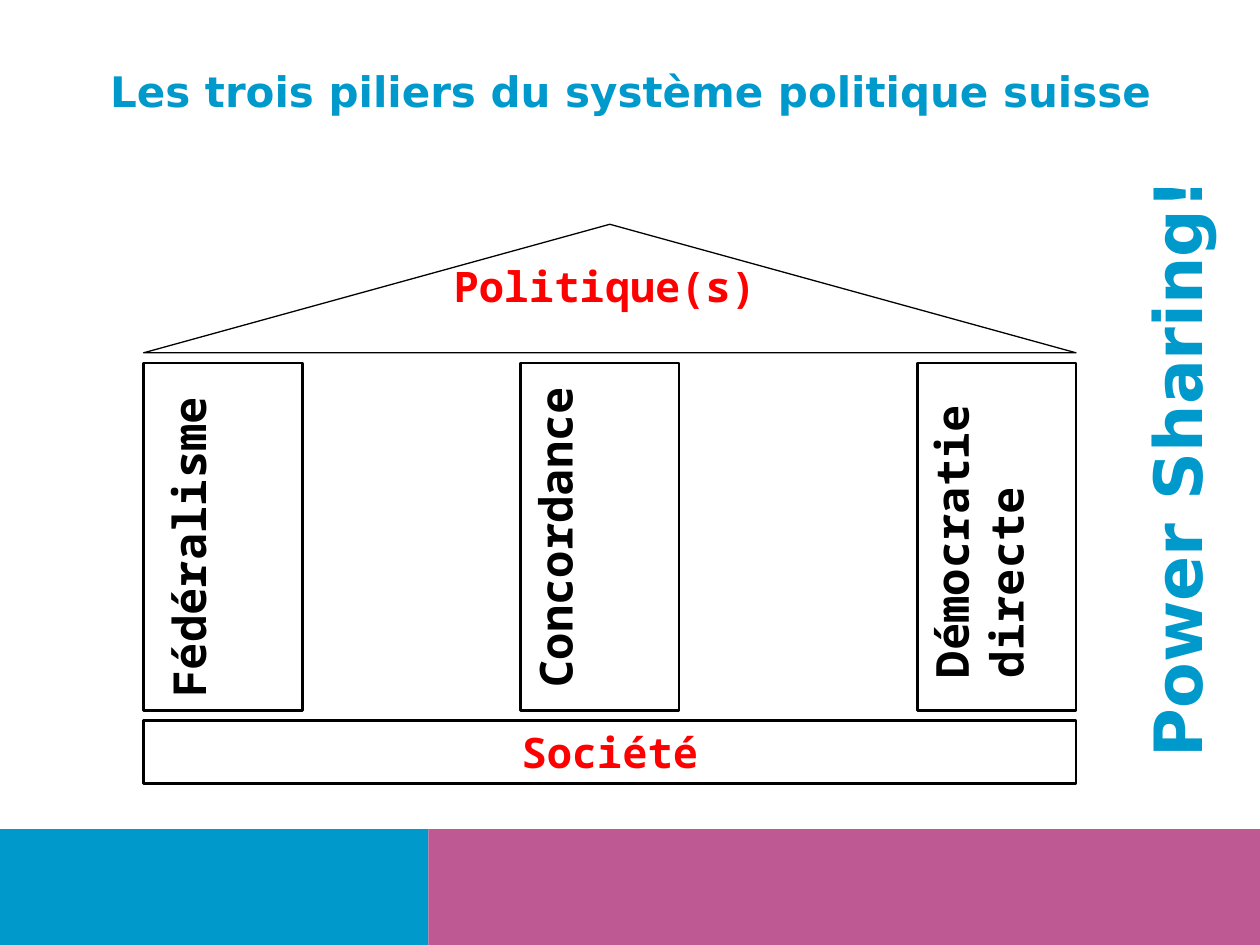
from pptx import Presentation
from pptx.dml.color import RGBColor
from pptx.enum.shapes import MSO_SHAPE as Kind
from pptx.enum.text import MSO_ANCHOR as Anchor, PP_ALIGN as Align
from pptx.util import Inches, Pt

BLUE, PINK, RED, BLACK, WHITE = "0099CC", "BE5993", "FF0000", "000000", "FFFFFF"
SANS, MONO = "DejaVu Sans", "Noto Sans Mono"

TITLE = "Les trois piliers du système politique suisse"
SIDE = "Power Sharing!"
ROOF, BASE = "Politique(s)", "Société"
# pillar left, label, label box
PILLARS = [
    (1.14, "Fédéralisme", (0.11, 3.99, 2.76, 0.53)),
    (4.13, "Concordance", (3.1, 3.99, 2.6, 0.53)),
    (7.28, "Démocratie directe", (6.47, 3.69, 2.6, 0.98)),
]
BANDS = [(0, 3.4, BLUE), (3.4, 6.6, PINK)]

LEFT, WIDTH = 1.14, 7.4
ROOF_TOP, ROOF_H = 1.78, 1.02
PILLAR_TOP, PILLAR_W, PILLAR_H = 2.88, 1.26, 2.76
BASE_TOP, BASE_H = 5.72, 0.5
BAND_TOP, BAND_H = 6.58, 0.92

deck = Presentation()
deck.slide_width, deck.slide_height = Inches(10), Inches(7.5)
slide = deck.slides.add_slide(deck.slide_layouts[6])


def color(code):
    return RGBColor.from_string(code)


def shape(box, kind=Kind.RECTANGLE, fill=None, line=None, width=1.5):
    item = slide.shapes.add_shape(kind, *map(Inches, box))
    item.shadow.inherit = False
    if fill:
        item.fill.solid()
        item.fill.fore_color.rgb = color(fill)
    else:
        item.fill.background()
    if line:
        item.line.color.rgb = color(line)
        item.line.width = Pt(width)
    else:
        item.line.fill.background()
    return item


def write(text, box=None, item=None, size=24, font=MONO, ink=BLACK,
          align=Align.LEFT, turn=0):
    """Put bold text in the given shape, or in a new text box."""
    item = item or slide.shapes.add_textbox(*map(Inches, box))
    item.rotation = turn
    frame = item.text_frame
    frame.word_wrap = True
    frame.vertical_anchor = Anchor.TOP
    para = frame.paragraphs[0]
    para.alignment = align
    run = para.add_run()
    run.text = text
    run.font.size, run.font.name, run.font.bold = Pt(size), font, True
    run.font.color.rgb = color(ink)


for left, width, fill in BANDS:
    shape((left, BAND_TOP, width, BAND_H), fill=fill)

write(TITLE, item=shape((0.29, 0.47, 9.43, 0.84), fill=WHITE),
      font=SANS, ink=BLUE, align=Align.CENTER)

base = shape((LEFT, BASE_TOP, WIDTH, BASE_H), line=BLACK)
write(BASE, item=base, ink=RED, align=Align.CENTER)

for left, label, box in PILLARS:
    shape((left, PILLAR_TOP, PILLAR_W, PILLAR_H), line=BLACK)
    write(label, box, size=26, turn=270)

shape((LEFT, ROOF_TOP, WIDTH, ROOF_H), Kind.ISOSCELES_TRIANGLE,
      line=BLACK, width=0.75)
write(ROOF, (3.5, 2.02, 2.6, 0.5), ink=RED, align=Align.CENTER)

write(SIDE, item=shape((6.87, 3.17, 5.04, 0.84), fill=WHITE),
      size=38, font=SANS, ink=BLUE, turn=270)

deck.save("out.pptx")
